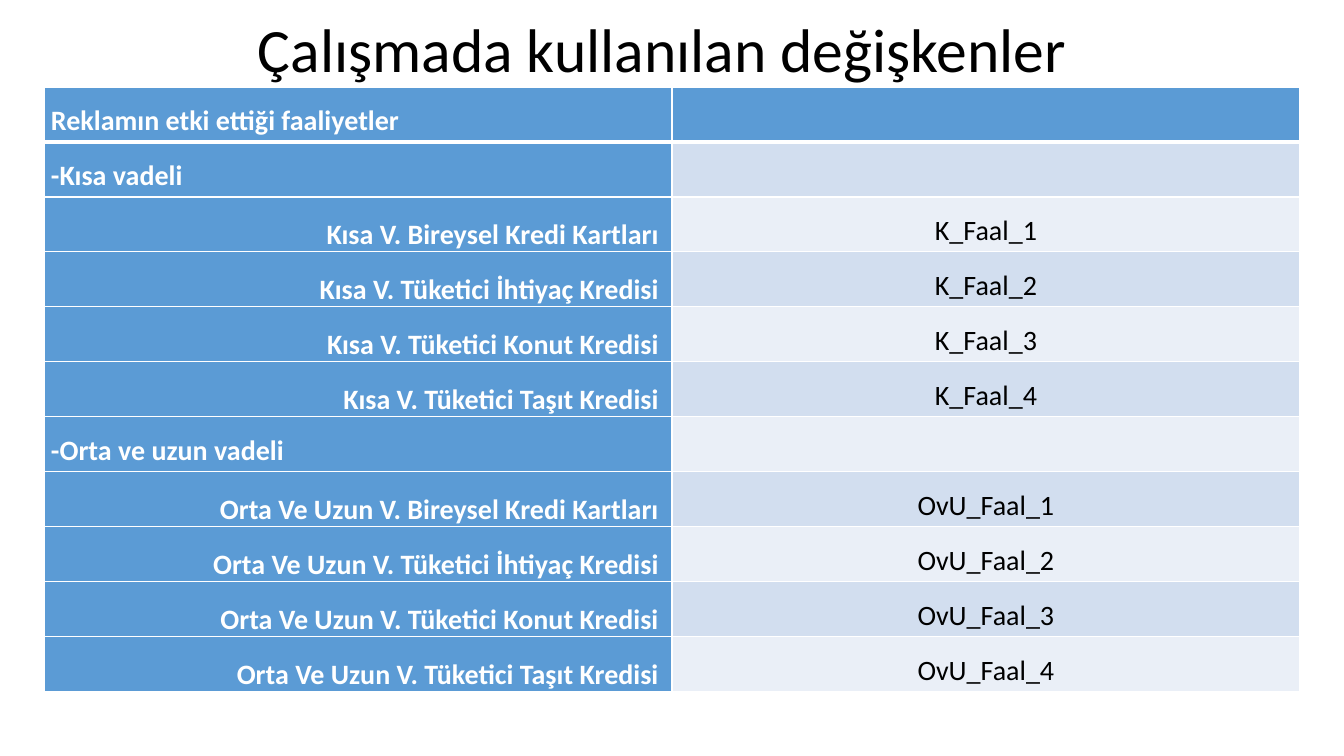
from lxml.etree import SubElement
from pptx import Presentation
from pptx.dml.color import RGBColor as RGB
from pptx.enum.text import MSO_ANCHOR as ANCHOR, PP_ALIGN as ALIGN
from pptx.oxml import parse_xml
from pptx.oxml.ns import nsdecls, qn
from pptx.util import Pt

EMU_PER_PX = 914400 / 100.8
COLORS = {"blue": "5B9BD5", "band": "D2DEEF", "pale": "EAEFF7",
          "white": "FFFFFF", "black": "000000"}
LOANS = ["Bireysel Kredi Kartları", "Tüketici İhtiyaç Kredisi",
         "Tüketici Konut Kredisi", "Tüketici Taşıt Kredisi"]
TERMS = [("-Kısa vadeli", "Kısa V.", "K_Faal"),
         ("-Orta ve uzun vadeli", "Orta Ve Uzun V.", "OvU_Faal")]


def px(n):
    return round(n * EMU_PER_PX)


def put_text(tf, text, size=20, color="black", bold=False,
             align=ALIGN.LEFT, spacing=1.5, font="Calibri"):
    p = tf.paragraphs[0]
    p.alignment, p.line_spacing = align, spacing
    r = p.add_run()
    r.text = text
    r.font.name, r.font.size, r.font.bold = font, Pt(size), bold
    r.font.color.rgb = RGB.from_string(COLORS[color])


class SlideBuilder:
    def __init__(self, prs):
        self.s = prs.slides.add_slide(prs.slide_layouts[6])

    def title(self, text, x, y, w, h):
        tf = self.s.shapes.add_textbox(px(x), px(y), px(w), px(h)).text_frame
        tf.word_wrap = True
        tf.vertical_anchor = ANCHOR.TOP
        put_text(tf, text, size=44, align=ALIGN.CENTER, spacing=0.9)

    def borders(self, cell, top, bottom):
        tc_pr = cell._tc.get_or_add_tcPr()
        for i, (side, width) in enumerate(zip("LRTB", (1, 1, top, bottom))):
            ln = parse_xml(f'<a:ln{side} {nsdecls("a")} w="{Pt(width)}"/>')
            fill = SubElement(ln, qn("a:solidFill"))
            SubElement(fill, qn("a:srgbClr"), val=COLORS["white"])
            tc_pr.insert(i, ln)

    def cell(self, cell, text, fill, anchor=ANCHOR.TOP, top=1, bottom=1, **fmt):
        cell.fill.solid()
        cell.fill.fore_color.rgb = RGB.from_string(COLORS[fill])
        cell.margin_left = cell.margin_right = px(7)
        cell.margin_top = cell.margin_bottom = 0
        cell.vertical_anchor = anchor
        self.borders(cell, top, bottom)
        if text:
            put_text(cell.text_frame, text, **fmt)

    def table(self, rows, x, y, col_w, row_h):
        table = self.s.shapes.add_table(
            len(rows), 2, px(x), px(y), px(2 * col_w), px(row_h * len(rows))).table
        for i, (label, code) in enumerate(rows):
            table.rows[i].height = px(row_h)
            edges = {"top": 3 if i == 1 else 1, "bottom": 3 if i == 0 else 1}
            # Loan rows have a code; headings do not
            anchor, align = ((ANCHOR.BOTTOM, ALIGN.RIGHT) if code
                             else (ANCHOR.TOP, ALIGN.LEFT))
            self.cell(table.cell(i, 0), label, "blue", anchor, align=align,
                      color="white", bold=True, **edges)
            shade = "blue" if i == 0 else "band" if i % 2 else "pale"
            self.cell(table.cell(i, 1), code, shade, align=ALIGN.CENTER, **edges)


def main():
    prs = Presentation()
    prs.slide_width, prs.slide_height = px(1344), px(756)
    slide = SlideBuilder(prs)

    # Variables table: a heading per term, then its loans
    rows = [("Reklamın etki ettiği faaliyetler", "")]
    for heading, prefix, code in TERMS:
        rows.append((heading, ""))
        rows += [(f"{prefix} {loan} ", f"{code}_{n}")
                 for n, loan in enumerate(LOANS, 1)]
    slide.table(rows, x=44, y=87, col_w=628, row_h=55)

    # Title
    slide.title("Çalışmada kullanılan değişkenler", 83, 14, 1159, 146)
    prs.save("out.pptx")


if __name__ == "__main__":
    main()
